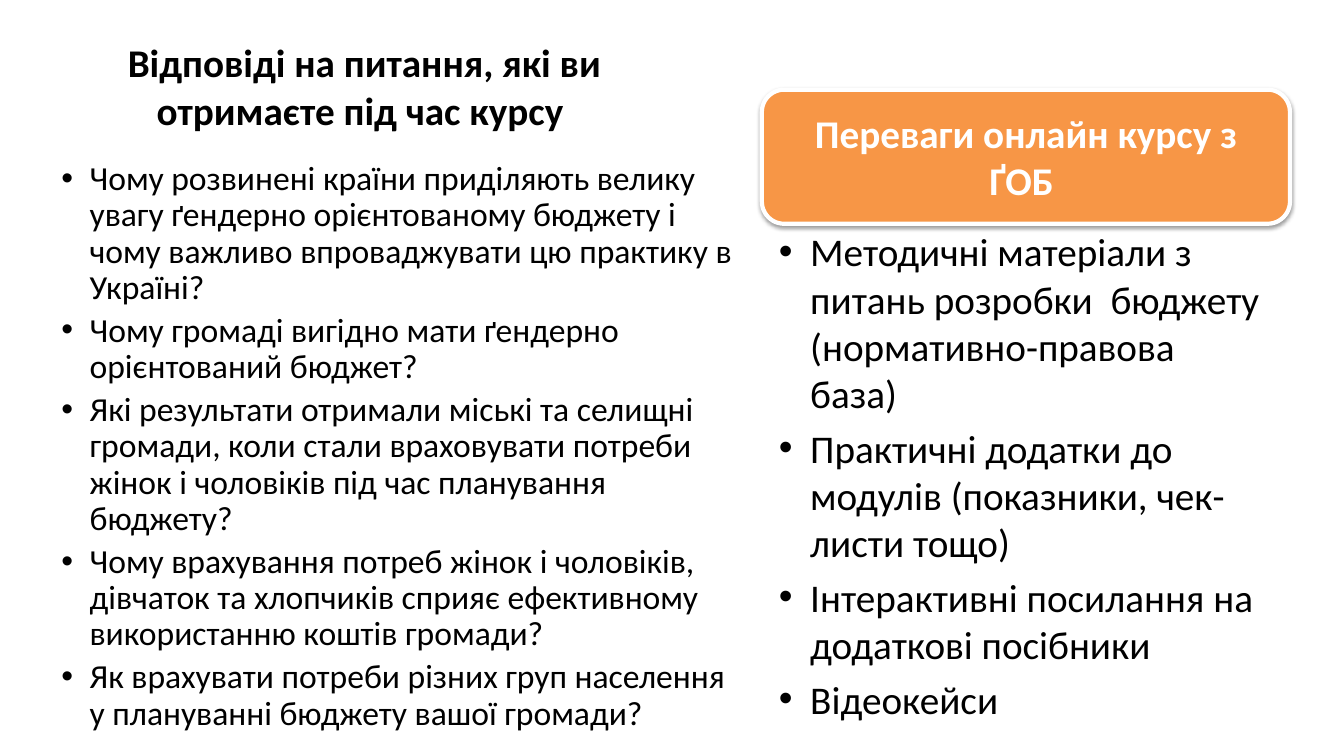
from lxml.etree import SubElement as Sub
from pptx import Presentation
from pptx.dml.color import RGBColor as Rgb
from pptx.enum.shapes import MSO_SHAPE as Shape
from pptx.enum.text import MSO_ANCHOR as Anchor, PP_ALIGN as Align
from pptx.oxml.ns import qn
from pptx.util import Cm, Pt

HUES = {"ink": "000000", "paper": "FFFFFF", "orange": "F79646"}

ASKS = [
    "Чому розвинені країни приділяють велику увагу ґендерно орієнтованому бюджету і чому важливо впроваджувати цю практику в Україні?",
    "Чому громаді вигідно мати ґендерно орієнтований бюджет?",
    "Які результати отримали міські та селищні громади, коли стали враховувати потреби жінок і чоловіків під час планування бюджету?",
    "Чому врахування потреб жінок і чоловіків, дівчаток та хлопчиків сприяє ефективному використанню коштів громади?",
    "Як врахувати потреби різних груп населення у плануванні бюджету вашої громади?",
]
GAINS = [
    "Методичні матеріали з питань розробки  бюджету (нормативно-правова база)",
    "Практичні додатки до  модулів (показники, чек-листи тощо)",
    "Інтерактивні посилання на додаткові посібники",
    "Відеокейси",
]


def hue(name):
    return Rgb.from_string(HUES[name])


def add_dot(para, indent):
    props = para._p.get_or_add_pPr()
    props.set("marL", str(Cm(indent)))
    props.set("indent", str(-Cm(indent)))
    Sub(props, qn("a:buFont"), typeface="Arial")
    Sub(props, qn("a:buChar"), char="•")


def write(frame, lines, size=28, bold=False, color="ink", align=Align.LEFT,
          anchor=Anchor.TOP, inset=(0.25, 0.13, 0.25, 0.13), indent=0,
          space=1.0, gap=0):
    frame.word_wrap = True
    frame.vertical_anchor = anchor
    left, top, right, base = map(Cm, inset)
    frame.margin_left, frame.margin_top = left, top
    frame.margin_right, frame.margin_bottom = right, base
    for i, line in enumerate(lines):
        para = frame.add_paragraph() if i else frame.paragraphs[0]
        if indent:
            add_dot(para, indent)
        para.alignment = align
        para.line_spacing = space
        para.space_before = Pt(gap if i else 0)
        run = para.add_run()
        run.text = line
        font = run.font
        font.name, font.size, font.bold = "Calibri", Pt(size), bold
        font.color.rgb = hue(color)


def add_box(slide, area, lines, **style):
    box = slide.shapes.add_textbox(*map(Cm, area))
    write(box.text_frame, lines, **style)


def add_shade(shape):
    shape.shadow.inherit = False
    effects = shape._element.spPr.find(qn("a:effectLst"))
    shade = Sub(effects, qn("a:outerShdw"), blurRad=str(Pt(3.1)),
                dist=str(Pt(1.6)), dir="5400000", rotWithShape="0")
    tone = Sub(shade, qn("a:srgbClr"), val=HUES["ink"])
    Sub(tone, qn("a:alpha"), val="38000")


def add_card(slide, area, lines, **style):
    card = slide.shapes.add_shape(Shape.ROUNDED_RECTANGLE, *map(Cm, area))
    card.fill.solid()
    card.fill.fore_color.rgb = hue("orange")
    card.line.color.rgb = hue("paper")
    card.line.width = Pt(3)
    add_shade(card)
    write(card.text_frame, lines, **style)


def main():
    deck = Presentation()
    deck.slide_width, deck.slide_height = Cm(33.87), Cm(19.05)
    slide = deck.slides.add_slide(deck.slide_layouts[6])
    add_box(slide, (1.3, 3.94, 17.58, 14.3), ASKS,
            size=24, indent=0.71, space=0.9, gap=4.8)
    add_box(slide, (1.7, 1.7, 14.96, 1.78),
            ["Відповіді на питання, які ви отримаєте під час курсу "],
            bold=True, align=Align.CENTER, anchor=Anchor.BOTTOM)
    add_card(slide, (19.2, 2.26, 13.31, 3.38), ["Переваги онлайн курсу з ҐОБ "],
             bold=True, color="paper", align=Align.CENTER,
             anchor=Anchor.MIDDLE, inset=(0.3, 0.3, 0.3, 0.3))
    add_box(slide, (19.2, 5.64, 13.31, 11.73), GAINS,
            inset=(0.43, 0.1, 0.56, 0.1), indent=0.79, gap=5.6)
    deck.save("out.pptx")


if __name__ == "__main__":
    main()
